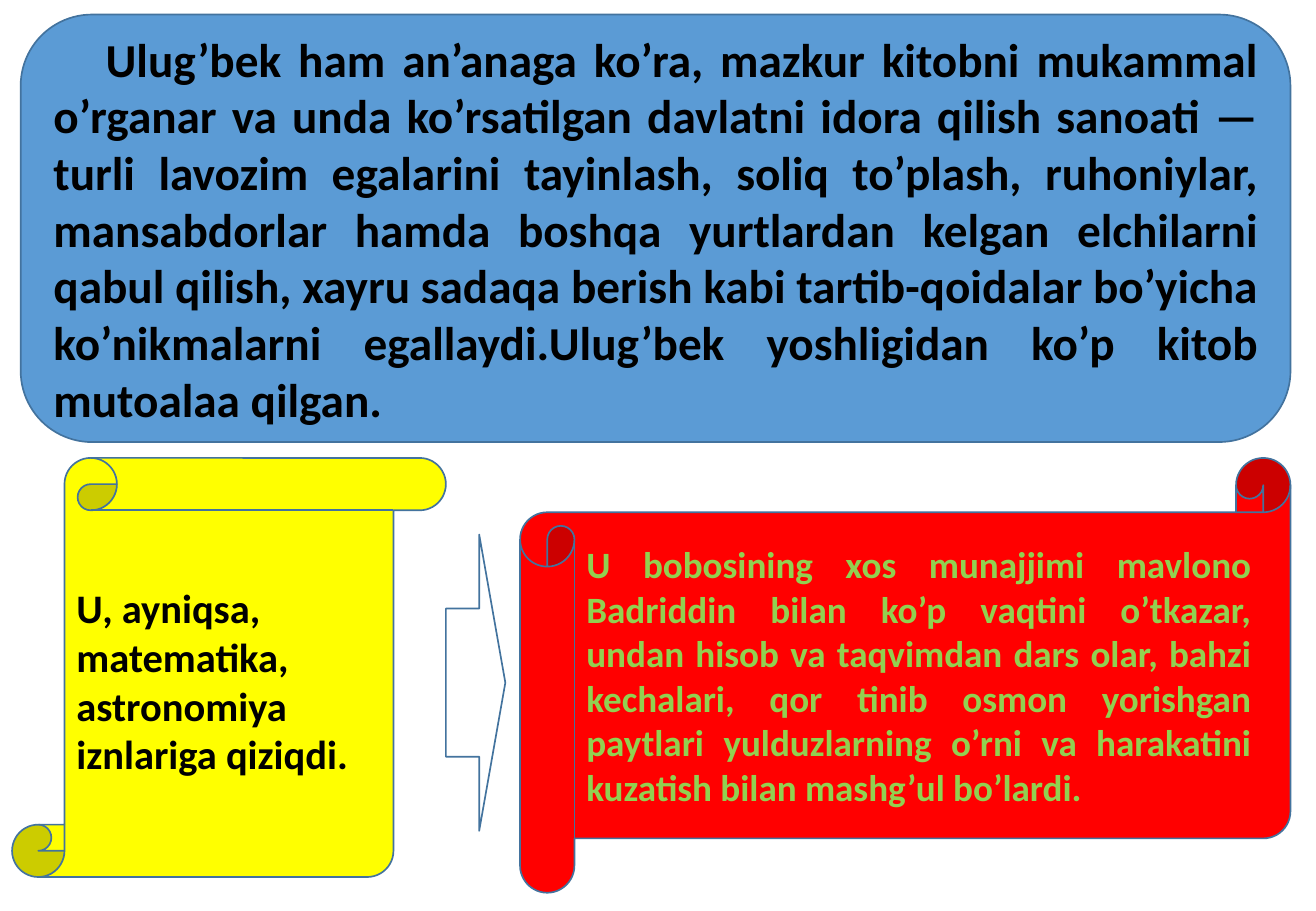
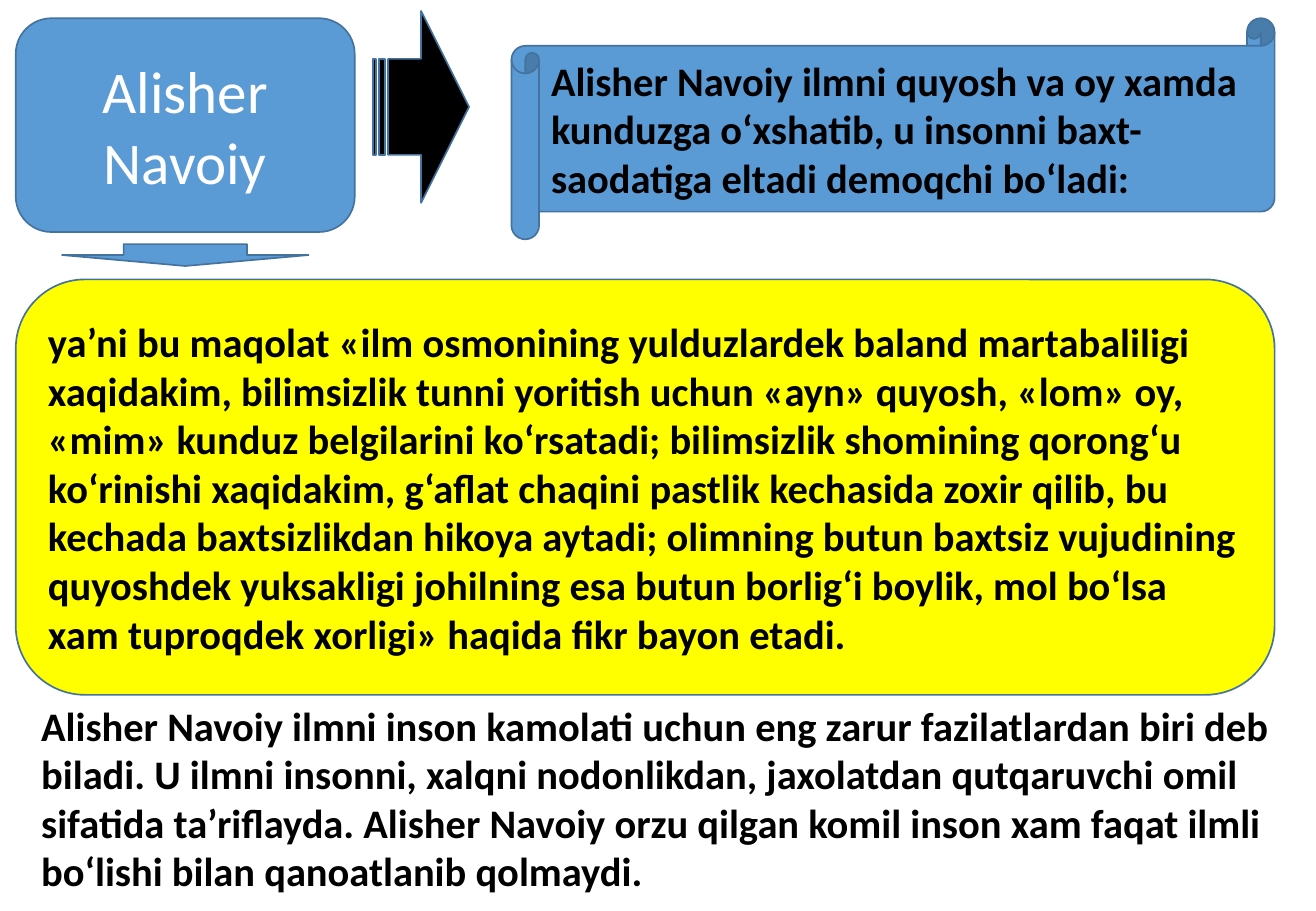
from pptx import Presentation
from pptx.dml.color import RGBColor
from pptx.enum.shapes import MSO_SHAPE as SHAPE
from pptx.enum.text import MSO_ANCHOR as ANCHOR, MSO_AUTO_SIZE as AUTO, PP_ALIGN as ALIGN
from pptx.util import Inches, Pt

COLORS = {
    "blue": "5B9BD5", "outline": "43739E", "yellow": "FFFF00", "red": "FF0000",
    "green": "92D050", "black": "000000", "white": "FFFFFF",
}
FONT = "Calibri"

prs = Presentation()
prs.slide_width, prs.slide_height = Inches(10.83), Inches(7.5)
COL, ROW = prs.slide_width / 100, prs.slide_height / 100  # 100 x 100 grid


def add_panel(slide, kind, left, top, width, height, fill=None):
    """Add an outlined shape, or a text box when kind is None."""
    box = [int(v) for v in (left * COL, top * ROW, width * COL, height * ROW)]
    if kind is None:
        return slide.shapes.add_textbox(*box)
    sp = slide.shapes.add_shape(kind, *box)
    sp.shadow.inherit = False
    sp.fill.solid()
    sp.fill.fore_color.rgb = RGBColor.from_string(COLORS[fill])
    sp.line.color.rgb = RGBColor.from_string(COLORS["outline"])
    sp.line.width = Pt(1)
    return sp


def write(sp, text, size=24, color="black", bold=True, align=ALIGN.LEFT, anchor=ANCHOR.MIDDLE):
    tf = sp.text_frame
    tf.word_wrap = True
    tf.vertical_anchor = anchor
    p = tf.paragraphs[0]
    p.alignment = align
    r = p.add_run()
    r.text = text
    r.font.name, r.font.size, r.font.bold = FONT, Pt(size), bold
    r.font.color.rgb = RGBColor.from_string(COLORS[color])
    return p


blank = prs.slide_layouts[6]

# Slide 1: Ulug’bek's education
s = prs.slides.add_slide(blank)
right, scroll_top = 98.06, 50.27

intro_left = 1.57
intro = add_panel(s, SHAPE.ROUNDED_RECTANGLE, intro_left, 1.6, right - intro_left, 46.93, "blue")
p = write(
    intro,
    "Ulug’bek ham an’anaga ko’ra, mazkur kitobni mukammal o’rganar va unda ko’rsatilgan "
    "davlatni idora qilish sanoati — turli lavozim egalarini tayinlash, soliq to’plash, "
    "ruhoniylar, mansabdorlar hamda boshqa yurtlardan kelgan elchilarni qabul qilish, xayru "
    "sadaqa berish kabi tartib-qoidalar bo’yicha ko’nikmalarni egallaydi.Ulug’bek "
    "yoshligidan ko’p kitob mutoalaa qilgan.",
    size=28, align=ALIGN.JUSTIFY)
p._p.get_or_add_pPr().set("indent", str(Inches(0.43)))  # first-line indent

interests = add_panel(s, SHAPE.VERTICAL_SCROLL, 0.92, scroll_top, 32.96, 46, "yellow")
write(interests, "U, ayniqsa, matematika, astronomiya iznlariga qiziqdi.")

arrow = add_panel(s, SHAPE.RIGHT_ARROW, 33.88, 58.67, 4.52, 32.53, "white")
arrow.adjustments[1] = 0.44

teacher_left = 39.52
teacher = add_panel(s, SHAPE.HORIZONTAL_SCROLL, teacher_left, scroll_top,
                    right - teacher_left, 47.73, "red")
write(
    teacher,
    "U bobosining xos munajjimi mavlono Badriddin bilan ko’p vaqtini o’tkazar, undan hisob "
    "va taqvimdan dars olar, bahzi kechalari, qor tinib osmon yorishgan paytlari "
    "yulduzlarning o’rni va harakatini kuzatish bilan mashg’ul bo’lardi.",
    size=22, color="green", align=ALIGN.JUSTIFY)

# Slide 2: Alisher Navoiy on knowledge
s = prs.slides.add_slide(blank)
left, right, top = 1.2, 96.86, 2
name_width, down_width = 25.76, 18.74

name = add_panel(s, SHAPE.FLOWCHART_ALTERNATE_PROCESS, left, top, name_width, 23.47, "blue")
write(name, "Alisher Navoiy", size=35, color="white", bold=False, align=ALIGN.CENTER)

add_panel(s, SHAPE.STRIPED_RIGHT_ARROW, 28.35, 1.2, 7.29, 21.07, "black")

idea_left = 38.87
idea = add_panel(s, SHAPE.HORIZONTAL_SCROLL, idea_left, top, right - idea_left, 24.27, "blue")
write(
    idea,
    "Alisher Navoiy ilmni quyosh va oy xamda kunduzga o‘xshatib, u insonni "
    "baxt-saodatiga eltadi demoqchi bo‘ladi:")

# Down arrow centred under the name
add_panel(s, SHAPE.DOWN_ARROW, left + (name_width - down_width) / 2, 26.8,
          down_width, 2.4, "blue")

quote_top, quote_height = 30.67, 45.6
quote = add_panel(s, SHAPE.FLOWCHART_ALTERNATE_PROCESS, left, quote_top,
                  right - left, quote_height, "yellow")
write(
    quote,
    "ya’ni bu maqolat «ilm osmonining yulduzlardek baland martabaliligi xaqidakim, "
    "bilimsizlik tunni yoritish uchun «ayn» quyosh, «lom» oy, «mim» kunduz belgilarini "
    "ko‘rsatadi; bilimsizlik shomining qorong‘u ko‘rinishi xaqidakim, g‘aflat chaqini "
    "pastlik kechasida zoxir qilib, bu kechada baxtsizlikdan hikoya aytadi; olimning butun "
    "baxtsiz vujudining quyoshdek yuksakligi johilning esa butun borlig‘i boylik, mol "
    "bo‘lsa xam tuproqdek xorligi» haqida fikr bayon etadi.")

summary = add_panel(s, None, 2.22, quote_top + quote_height, 96.58, 22.93)
write(
    summary,
    "Alisher Navoiy ilmni inson kamolati uchun eng zarur fazilatlardan biri deb biladi. U "
    "ilmni insonni, xalqni nodonlikdan, jaxolatdan qutqaruvchi omil sifatida ta’riflayda. "
    "Alisher Navoiy orzu qilgan komil inson xam faqat ilmli bo‘lishi bilan qanoatlanib "
    "qolmaydi.",
    anchor=ANCHOR.TOP)
summary.text_frame.auto_size = AUTO.SHAPE_TO_FIT_TEXT

prs.save("out.pptx")
